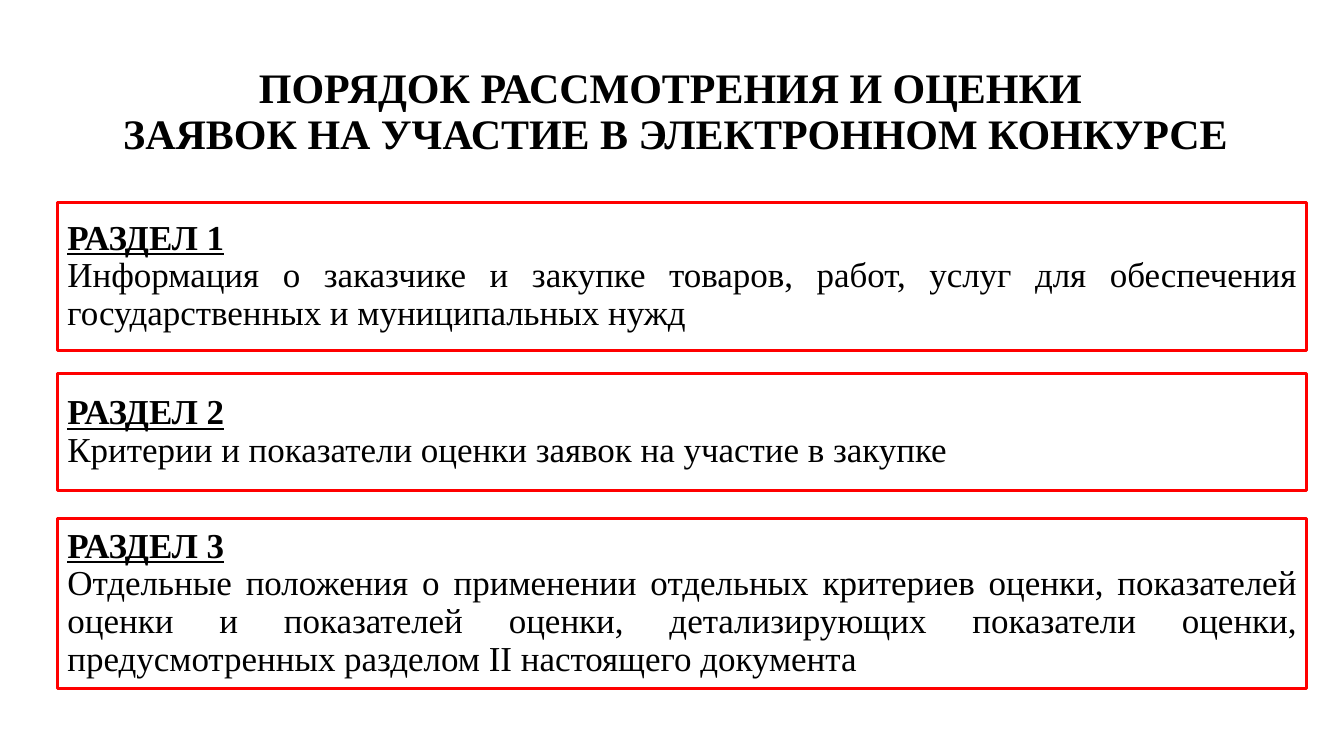
from pptx import Presentation
from pptx.dml.color import RGBColor
from pptx.enum.shapes import MSO_SHAPE
from pptx.enum.text import MSO_ANCHOR, MSO_AUTO_SIZE, PP_ALIGN
from pptx.util import Inches, Pt

RECT = MSO_SHAPE.RECTANGLE
MIDDLE = MSO_ANCHOR.MIDDLE
NO_FIT = MSO_AUTO_SIZE.NONE
LEFT, CENTER, JUSTIFY = PP_ALIGN.LEFT, PP_ALIGN.CENTER, PP_ALIGN.JUSTIFY
BLACK = RGBColor(0, 0, 0)
RED = RGBColor(255, 0, 0)

TITLE = (
    "ПОРЯДОК РАССМОТРЕНИЯ И ОЦЕНКИ ",
    "ЗАЯВОК НА УЧАСТИЕ В ЭЛЕКТРОННОМ КОНКУРСЕ",
)
PARTS = [
    (2.01, 1.47, JUSTIFY,
     "Информация о заказчике и закупке товаров, работ, услуг для обеспечения "
     "государственных и муниципальных нужд "),
    (3.71, 1.16, LEFT,
     "Критерии и показатели оценки заявок на участие в закупке"),
    (5.14, 1.69, JUSTIFY,
     "Отдельные положения о применении отдельных критериев оценки, показателей "
     "оценки и показателей оценки, детализирующих показатели оценки, "
     "предусмотренных разделом II настоящего документа"),
]


class Page:
    font = "Times New Roman"
    left = 0.57

    def __init__(self, deck):
        self.slide = deck.slides.add_slide(deck.slide_layouts[5])

    def frame(self, shape):
        frame = shape.text_frame
        frame.word_wrap = True
        frame.auto_size = NO_FIT
        frame.vertical_anchor = MIDDLE
        return frame

    def para(self, para, align):
        para.alignment = align
        para.line_spacing = 0.9
        para.space_before = Pt(0)
        return para

    def run(self, para, text, size, bold=False, under=False):
        run = para.add_run()
        run.text = text
        font = run.font
        font.name = self.font
        font.size = Pt(size)
        font.bold = bold
        font.underline = under
        font.color.rgb = BLACK

    def title(self, lines):
        shape = self.slide.shapes.title
        shape.left, shape.top = Inches(self.left), Inches(0.38)
        shape.width, shape.height = Inches(12.27), Inches(1.48)
        para = self.para(self.frame(shape).paragraphs[0], CENTER)
        for index, line in enumerate(lines):
            if index:
                para.add_line_break()
            self.run(para, line, 30, bold=True)

    def box(self, top, height, head, body, align):
        shape = self.slide.shapes.add_shape(
            RECT, Inches(self.left), Inches(top), Inches(12.39), Inches(height))
        shape.shadow.inherit = False
        shape.fill.background()
        shape.line.color.rgb = RED
        shape.line.width = Pt(2.25)
        frame = self.frame(shape)
        self.run(self.para(frame.paragraphs[0], LEFT), head, 25, bold=True, under=True)
        self.run(self.para(frame.add_paragraph(), align), body, 25)


def main():
    deck = Presentation()
    deck.slide_width, deck.slide_height = Inches(13.33), Inches(7.5)
    page = Page(deck)
    page.title(TITLE)
    for number, (top, height, align, body) in enumerate(PARTS, 1):
        page.box(top, height, f"РАЗДЕЛ {number}", body, align)
    deck.save("out.pptx")


if __name__ == "__main__":
    main()
